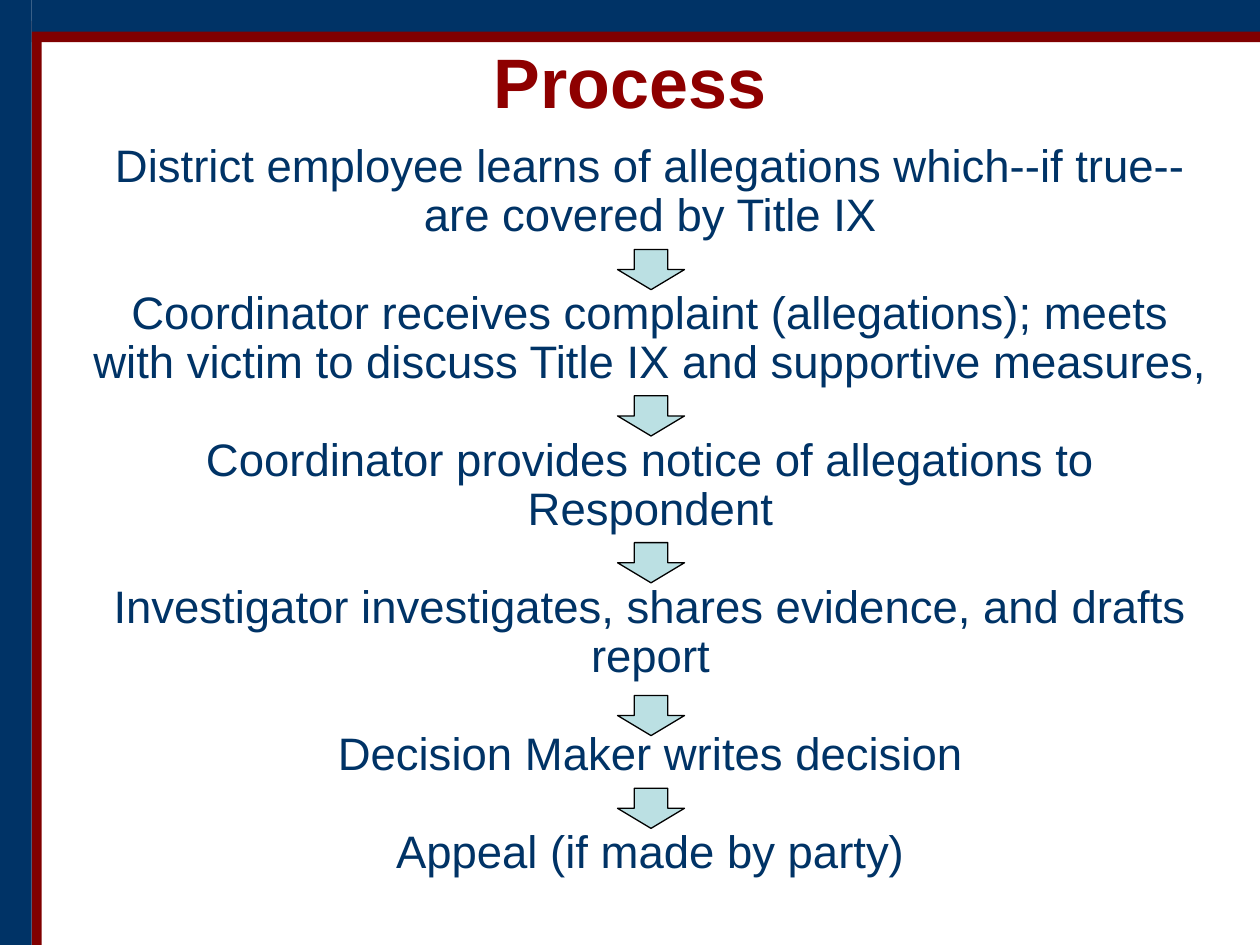
from dataclasses import dataclass

from pptx import Presentation
from pptx.dml.color import RGBColor
from pptx.enum.shapes import MSO_SHAPE
from pptx.enum.text import MSO_ANCHOR, PP_ALIGN
from pptx.util import Cm, Pt

COLORS = {
    "navy": "003366",
    "maroon": "800000",
    "title": "8E0000",
    "arrow": "BBE0E3",
    "line": "000000",
}
FONT = "Arial"
LEAD = Pt(28)


@dataclass
class Box:
    left: float
    top: float
    width: float
    height: float

    def place(self) -> tuple:
        return Cm(self.left), Cm(self.top), Cm(self.width), Cm(self.height)


@dataclass
class Bar:
    box: Box
    color: str


BARS = [
    Bar(Box(0.64, 0.64, 0.2, 18.41), "maroon"),
    Bar(Box(0.64, 0.42, 24.76, 0.43), "maroon"),
    Bar(Box(0, 0, 0.64, 19.05), "navy"),
    Bar(Box(0.64, 0, 24.76, 0.64), "navy"),
]
STEPS = [
    "District employee learns of allegations which--if true--are covered by Title IX",
    "Coordinator receives complaint (allegations); meets with victim to discuss "
    "Title IX and supportive measures,",
    "Coordinator provides notice of allegations to Respondent",
    "Investigator investigates, shares evidence, and drafts report",
    "Decision Maker writes decision",
    "Appeal (if made by party)",
]
ARROW_TOPS = [5.03, 7.98, 10.94, 14.02, 15.89]


def rgb(name: str) -> RGBColor:
    return RGBColor.from_string(COLORS[name])


def add_solid(slide, kind, box: Box, color: str):
    shape = slide.shapes.add_shape(kind, *box.place())
    shape.shadow.inherit = False
    shape.fill.solid()
    shape.fill.fore_color.rgb = rgb(color)
    shape.line.fill.background()
    return shape


def add_arrow(slide, top: float) -> None:
    arrow = add_solid(slide, MSO_SHAPE.DOWN_ARROW, Box(12.45, top, 1.35, 0.81), "arrow")
    arrow.line.color.rgb = rgb("line")
    arrow.line.width = Pt(0.75)


def add_text(slide, box: Box, lines: list[str], size: int, color: str, bold=False):
    frame = slide.shapes.add_textbox(*box.place()).text_frame
    frame.word_wrap = True
    frame.text = "\n".join(lines)
    for para in frame.paragraphs:
        para.alignment = PP_ALIGN.CENTER
        for run in para.runs:
            run.font.name = FONT
            run.font.size = Pt(size)
            run.font.bold = bold
            run.font.color.rgb = rgb(color)
    return frame


def main() -> None:
    deck = Presentation()
    deck.slide_width, deck.slide_height = Cm(25.4), Cm(19.05)
    slide = deck.slides.add_slide(deck.slide_layouts[6])

    # Frame along the top and left edges
    for bar in BARS:
        add_solid(slide, MSO_SHAPE.RECTANGLE, bar.box, bar.color)

    # Title
    title = add_text(slide, Box(1.9, 0.64, 21.6, 1.96), ["Process"], 40, "title", True)
    title.vertical_anchor = MSO_ANCHOR.MIDDLE

    # Steps, one line apart to leave room for the arrows
    body = add_text(slide, Box(1.47, 2.74, 23.29, 14.81), STEPS, 26, "navy")
    for index, para in enumerate(body.paragraphs):
        para.line_spacing = LEAD
        if index:
            para.space_before = LEAD

    # Arrows between steps
    for top in ARROW_TOPS:
        add_arrow(slide, top)

    deck.save("out.pptx")


if __name__ == "__main__":
    main()
